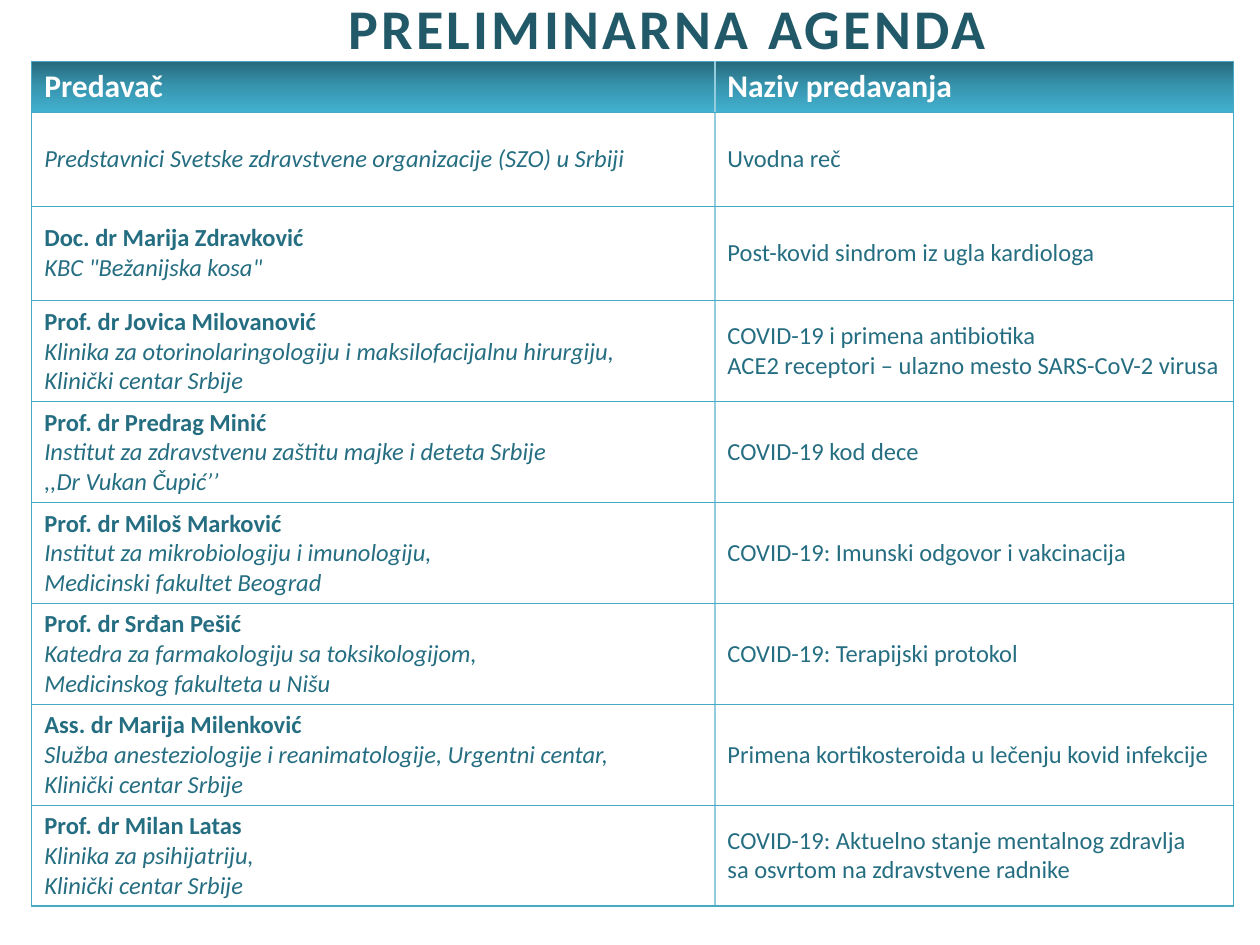
"""Build the preliminary agenda slide: a title above a table of speakers and talks."""
from dataclasses import dataclass

from lxml import etree
from pptx import Presentation
from pptx import util as u
from pptx.dml.color import RGBColor
from pptx.enum import text
from pptx.oxml import ns


@dataclass(frozen=True)
class Theme:
    font: str = "Calibri"
    title: str = "215968"
    header: str = "FFFFFF"
    body: str = "256E82"
    border: str = "46AAC5"
    divider: str = "93CDDD"
    gradient: tuple = ((0, "27697B"), (50, "3795AF"), (100, "42B1CF"))
    title_size: int = 32
    header_size: int = 18
    body_size: int = 14


theme = Theme()


def style(para, size, color, bold=False, italic=False):
    for span in para.runs:
        span.font.name = theme.font
        span.font.size = u.Pt(size)
        span.font.color.rgb = RGBColor.from_string(color)
        span.font.bold = bold
        span.font.italic = italic


def add_color(parent, tag, color, **attributes):
    holder = etree.SubElement(parent, ns.qn(tag), **attributes)
    etree.SubElement(holder, ns.qn("a:srgbClr"), val=color)


agenda = [
    (["Predavač"], ["Naziv predavanja"]),
    (["Predstavnici Svetske zdravstvene organizacije (SZO) u Srbiji"], ["Uvodna reč"]),
    (["Doc. dr Marija Zdravković", 'KBC "Bežanijska kosa"'],
     ["Post-kovid sindrom iz ugla kardiologa"]),
    (["Prof. dr Jovica Milovanović",
      "Klinika za otorinolaringologiju i maksilofacijalnu hirurgiju,",
      "Klinički centar Srbije"],
     ["COVID-19 i primena antibiotika", "ACE2 receptori – ulazno mesto SARS-CoV-2 virusa"]),
    (["Prof. dr Predrag Minić", "Institut za zdravstvenu zaštitu majke i deteta Srbije",
      ",,Dr Vukan Čupić’’"],
     ["COVID-19 kod dece"]),
    (["Prof. dr Miloš Marković", "Institut za mikrobiologiju i imunologiju,",
      "Medicinski fakultet Beograd"],
     ["COVID-19: Imunski odgovor i vakcinacija"]),
    (["Prof. dr Srđan Pešić", "Katedra za farmakologiju sa toksikologijom,",
      "Medicinskog fakulteta u Nišu"],
     ["COVID-19: Terapijski protokol"]),
    (["Ass. dr Marija Milenković",
      "Služba anesteziologije i reanimatologije, Urgentni centar,",
      "Klinički centar Srbije"],
     ["Primena kortikosteroida u lečenju kovid infekcije"]),
    (["Prof. dr Milan Latas", "Klinika za psihijatriju,", "Klinički centar Srbije"],
     ["COVID-19: Aktuelno stanje mentalnog zdravlja", "sa osvrtom na zdravstvene radnike"]),
]

deck = Presentation()
deck.slide_width, deck.slide_height = u.Cm(25.4), u.Cm(19.05)
page = deck.slides.add_slide(deck.slide_layouts[6])

box = page.shapes.add_textbox(u.Cm(4.88), u.Cm(-0.18), u.Cm(17.15), u.Cm(1.42))
frame = box.text_frame
frame.word_wrap = True
frame.margin_left = frame.margin_right = frame.margin_bottom = 0
frame.margin_top = u.Cm(0.05)
frame.text = "PRELIMINARNA AGENDA"
heading = frame.paragraphs[0]
heading.alignment = text.PP_ALIGN.CENTER
style(heading, theme.title_size, theme.title, bold=True)
heading.runs[0].font._element.set("spc", "190")

column_widths = [13.77, 10.46]
row_heights = [1.02] + [1.9] * (len(agenda) - 1)
table = page.shapes.add_table(
    len(agenda), len(column_widths), u.Cm(0.64), u.Cm(1.24),
    u.Cm(sum(column_widths)), u.Cm(sum(row_heights))).table
table.horz_banding = False
for column, width in zip(table.columns, column_widths):
    column.width = u.Cm(width)

for row_index, (entry, height) in enumerate(zip(agenda, row_heights)):
    table.rows[row_index].height = u.Cm(height)
    for column_index, lines in enumerate(entry):
        cell = table.cell(row_index, column_index)
        cell.vertical_anchor = text.MSO_ANCHOR.MIDDLE
        cell.text_frame.text = "\n".join(lines)
        for line_index, para in enumerate(cell.text_frame.paragraphs):
            if row_index == 0:
                style(para, theme.header_size, theme.header, bold=True)
            else:
                speaker = column_index == 0
                name = speaker and line_index == 0 and len(lines) > 1
                style(para, theme.body_size, theme.body, bold=name, italic=speaker and not name)

        properties = cell._tc.get_or_add_tcPr()
        inner_side = "R" if column_index == 0 else "L"
        for side in "LRTB":
            inner = side == inner_side
            line = etree.SubElement(properties, ns.qn(f"a:ln{side}"),
                                    w=str(u.Pt(1 if inner else 0.75)))
            add_color(line, "a:solidFill", theme.divider if inner else theme.border)
        if row_index == 0:
            gradient = etree.SubElement(properties, ns.qn("a:gradFill"), rotWithShape="1")
            stops = etree.SubElement(gradient, ns.qn("a:gsLst"))
            for position, color in theme.gradient:
                add_color(stops, "a:gs", color, pos=str(position * 1000))
            etree.SubElement(gradient, ns.qn("a:lin"), ang="5400000", scaled="0")
        else:
            cell.fill.background()

deck.save("out.pptx")
